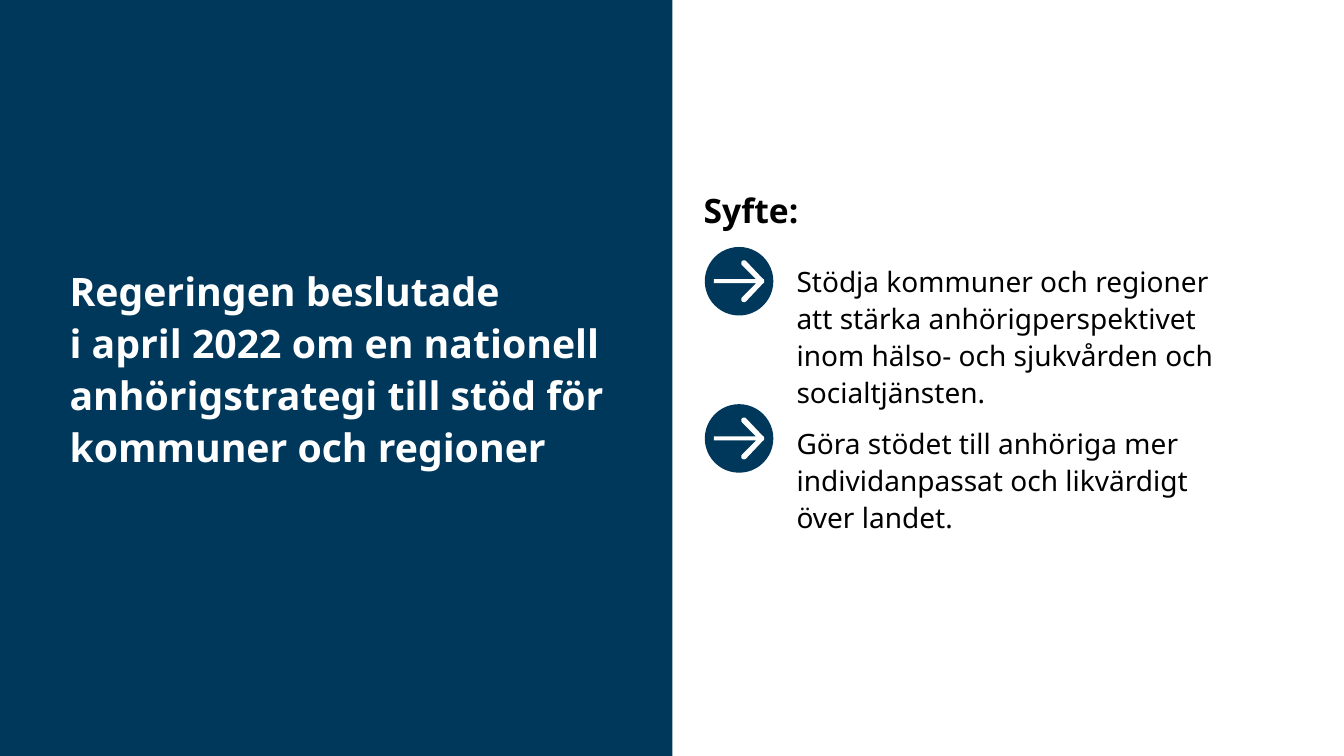
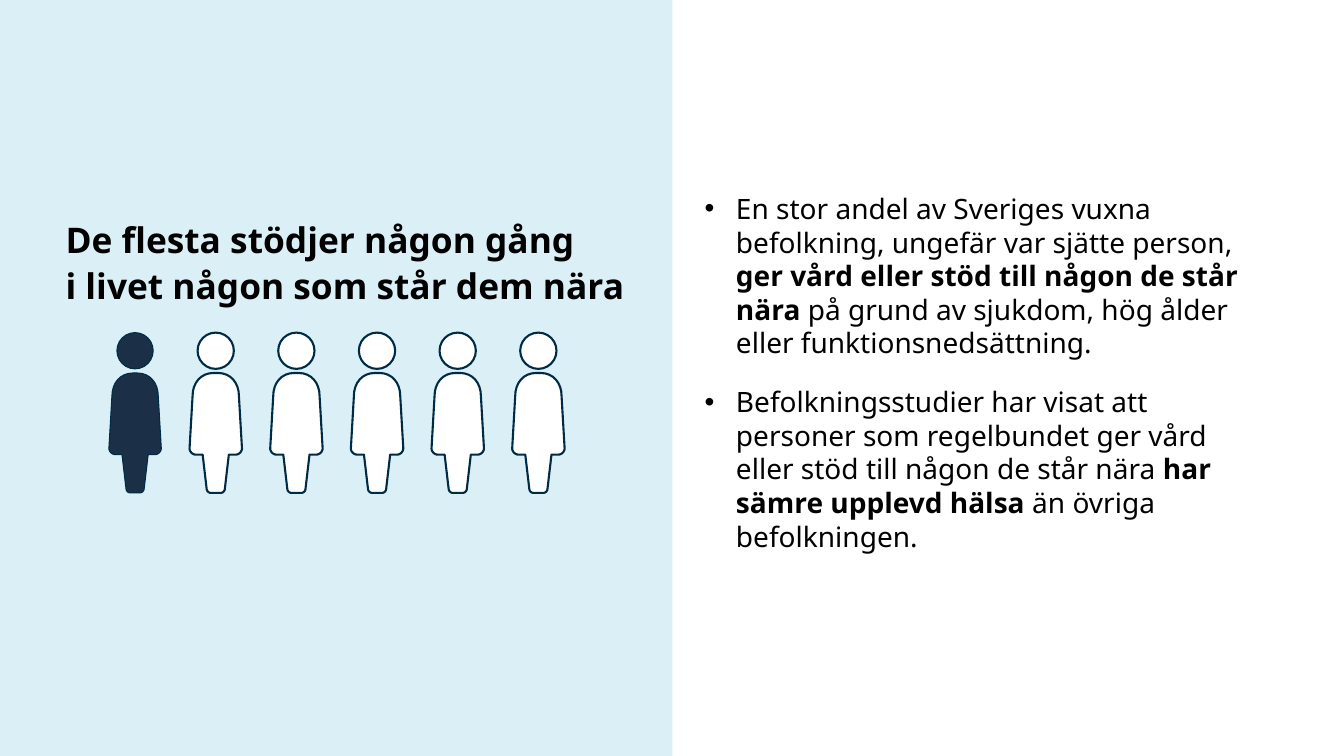
import pptx
import pptx.dml.color
import pptx.enum.shapes
import pptx.enum.text
import pptx.oxml.ns
import pptx.util
from lxml import etree

Inches = pptx.util.Inches
Pt = pptx.util.Pt
qn = pptx.oxml.ns.qn
RGB = pptx.dml.color.RGBColor.from_string
SHAPE = pptx.enum.shapes.MSO_SHAPE

FONT = "Noto Sans"
COLORS = {
    "navy": "00385C",
    "sky": "DBF0F6",
    "white": "FFFFFF",
    "black": "000000",
    "person": "1B2F46",
    "outline": "002B45",
}
CURVE_STEPS = 8


def write_text(box, paragraphs, left, top, width, height, size, color="black",
               bold=False, line_spacing=1.0, space_before=0, inset_top=0.05, bullet=None):
    box.left, box.top, box.width, box.height = map(Inches, (left, top, width, height))
    frame = box.text_frame
    frame.word_wrap = True
    frame.auto_size = pptx.enum.text.MSO_AUTO_SIZE.NONE
    frame.vertical_anchor = pptx.enum.text.MSO_ANCHOR.TOP
    frame.margin_left, frame.margin_right = 0, Inches(0.1)
    frame.margin_top, frame.margin_bottom = Inches(inset_top), Inches(0.05)
    for number, text in enumerate(paragraphs):
        paragraph = frame.add_paragraph() if number else frame.paragraphs[0]
        if bullet:
            properties = paragraph._p.get_or_add_pPr()
            properties.set("marL", str(Inches(0.31)))
            properties.set("indent", str(-Inches(0.31)))
            etree.SubElement(properties, qn("a:buFont"), typeface="Arial")
            etree.SubElement(properties, qn("a:buChar"), char=bullet)
        paragraph.alignment = pptx.enum.text.PP_ALIGN.LEFT
        paragraph.line_spacing = line_spacing
        paragraph.space_before = Pt(space_before if number else 0)
        for part, phrase in enumerate(text.split("**")):
            for row, words in enumerate(phrase.split("\n")):
                if row:
                    paragraph.add_line_break()
                    line_break = paragraph._p.findall(qn("a:br"))[-1]
                    etree.SubElement(line_break, qn("a:rPr"), sz=str(int(size * 100)))
                run = paragraph.add_run()
                run.text = words
                run.font.name = FONT
                run.font.size = Pt(size)
                run.font.bold = bold or part % 2 == 1
                run.font.color.rgb = RGB(COLORS[color])


def draw_symmetric(shapes, half, center_x, center_y, mirror):
    points = [half[0]]
    for segment in half[1:]:
        if len(segment) == 2:
            points.append(segment)
            continue
        x0, y0 = points[-1]
        x1, y1, x2, y2, x3, y3 = segment
        for step in range(1, CURVE_STEPS + 1):
            t = step / CURVE_STEPS
            a, b, c, d = (1 - t) ** 3, 3 * t * (1 - t) ** 2, 3 * t * t * (1 - t), t ** 3
            points.append((a * x0 + b * x1 + c * x2 + d * x3,
                           a * y0 + b * y1 + c * y2 + d * y3))
    points += [(x * mirror[0], y * mirror[1]) for x, y in reversed(points)]
    outline = [(Inches(center_x + x), Inches(center_y + y)) for x, y in points]
    builder = shapes.build_freeform(*outline[0])
    builder.add_line_segments(outline[1:], close=True)
    return builder.convert_to_shape()


presentation = pptx.Presentation()
presentation.slide_width = Inches(13.33)
presentation.slide_height = Inches(7.5)

openings = [
    {
        "panel": "navy",
        "title": "Regeringen beslutade\n"
                 "i april 2022 om en nationell anhörigstrategi till stöd för kommuner och regioner",
        "format": {"left": 0.69, "top": 2.61, "height": 2.28, "size": 28, "color": "white"},
    },
    {
        "panel": "sky",
        "title": "De flesta stödjer någon gång\ni livet någon som står dem nära",
        "format": {"left": 0.65, "top": 2.12, "height": 1.18, "size": 25.2},
    },
]
slides = []
for opening in openings:
    slide = presentation.slides.add_slide(presentation.slide_layouts[5])
    title = slide.shapes.title
    panel = slide.shapes.add_shape(SHAPE.RECTANGLE, 0, 0, Inches(6.67), Inches(7.5))
    panel.shadow.inherit = False
    panel.fill.solid()
    panel.fill.fore_color.rgb = RGB(COLORS[opening["panel"]])
    panel.line.fill.background()
    title.element.addprevious(panel.element)
    write_text(title, [opening["title"]], width=5.66, bold=True, line_spacing=1.1,
               inset_top=0, **opening["format"])
    slides.append(slide)
strategy, carers = slides

write_text(strategy.shapes.add_textbox(0, 0, 0, 0), ["Syfte:"],
           left=6.98, top=1.83, width=2.06, height=0.45, size=24, bold=True)
aims = [
    "Stödja kommuner och regioner att stärka anhörigperspektivet inom hälso- och sjukvården "
    "och socialtjänsten.",
    "Göra stödet till anhöriga mer individanpassat och likvärdigt över landet.",
]
write_text(strategy.shapes.add_textbox(0, 0, 0, 0), aims, left=7.9, top=2.54, width=4.55,
           height=2.95, size=20, line_spacing=1.1, space_before=10)

arrow_half = [
    (-0.25, -0.02), (0.17, -0.02), (0.03, -0.16),
    (0.02, -0.17, 0.02, -0.19, 0.03, -0.2),
    (0.04, -0.21, 0.06, -0.21, 0.07, -0.2),
    (0.24, -0.02), (0.25, -0.02, 0.25, -0.01, 0.25, 0),
]
badge_size = 0.68
for badge_top in (2.45, 4.01):
    badge = strategy.shapes.add_group_shape().shapes
    disc = badge.add_shape(SHAPE.OVAL, Inches(6.99), Inches(badge_top),
                           Inches(badge_size), Inches(badge_size))
    arrow = draw_symmetric(badge, arrow_half, 7.33, badge_top + badge_size / 2, (1, -1))
    for piece, color in ((disc, "navy"), (arrow, "white")):
        piece.shadow.inherit = False
        piece.fill.solid()
        piece.fill.fore_color.rgb = RGB(COLORS[color])
        piece.line.fill.background()

findings = [
    "En stor andel av Sveriges vuxna befolkning, ungefär var sjätte person, "
    "**ger vård eller stöd till någon de står nära** på grund av sjukdom, hög ålder "
    "eller funktionsnedsättning.",
    "Befolkningsstudier har visat att personer som regelbundet ger vård eller stöd till någon "
    "de står nära **har sämre upplevd hälsa **än övriga befolkningen.",
]
write_text(carers.shapes.add_textbox(0, 0, 0, 0), findings, left=6.99, top=1.85, width=5.66,
           height=3.81, size=20, space_before=18, bullet="•")

body_half = [
    (0.02, 0), (0.15, 0, 0.23, 0.1, 0.23, 0.23),
    (0.26, 0.75), (0.26, 0.78, 0.23, 0.81, 0.2, 0.81),
    (0.13, 0.81), (0.09, 1.15), (0.09, 1.17, 0.07, 1.19, 0.05, 1.19),
]
head_size = 0.36
people = carers.shapes.add_group_shape().shapes
for person in range(6):
    center = 1.34 + person * 0.8
    body = draw_symmetric(people, body_half, center, 3.7, (-1, 1))
    head = people.add_shape(SHAPE.OVAL, Inches(center - head_size / 2), Inches(3.3),
                            Inches(head_size), Inches(head_size))
    for piece in (body, head):
        piece.shadow.inherit = False
        piece.fill.solid()
        piece.fill.fore_color.rgb = RGB(COLORS["white" if person else "person"])
        piece.line.color.rgb = RGB(COLORS["outline"])
        piece.line.width = Pt(1.5 if person else 0.75)

presentation.save("out.pptx")
